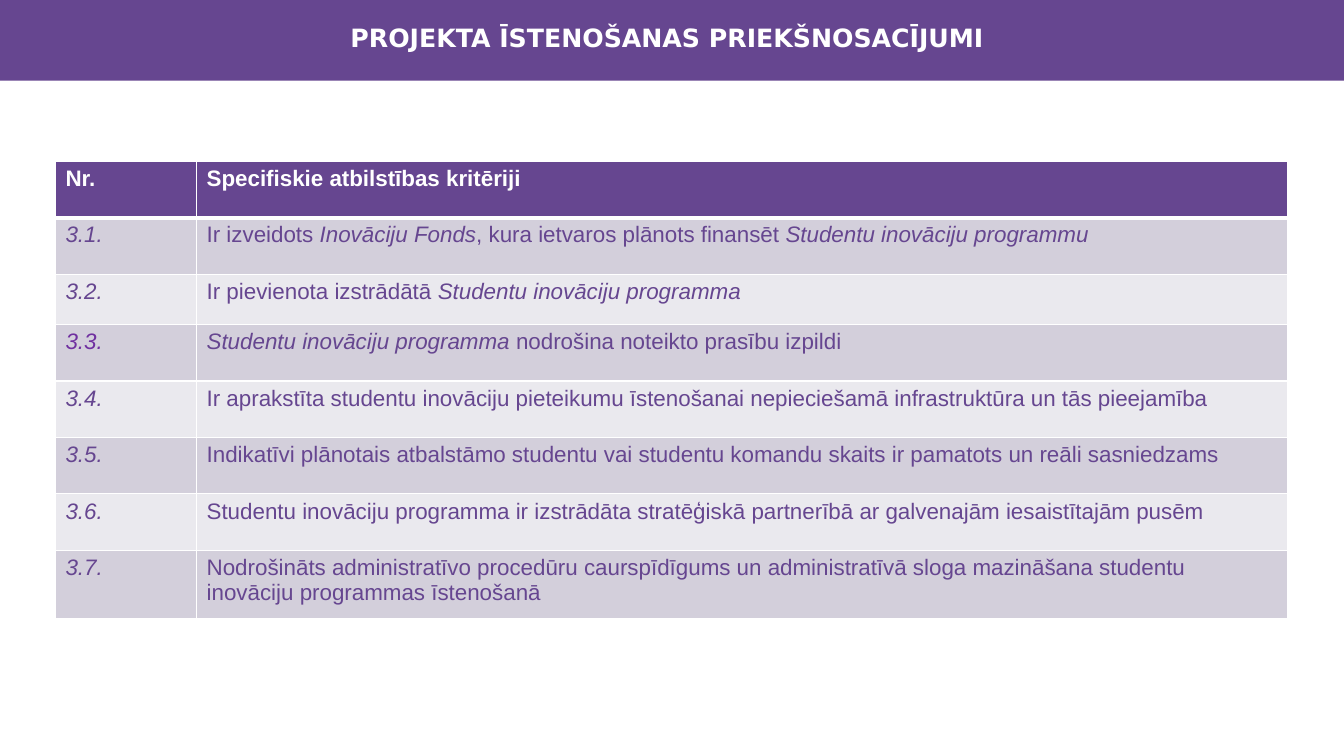
from lxml import etree
from pptx import Presentation
from pptx.dml.color import RGBColor
from pptx.enum import shapes, text
from pptx.oxml.ns import qn
from pptx.util import Inches, Pt

PURPLE, VIOLET, WHITE = "664690", "7030A0", "FFFFFF"
BANDS = ("D3CFDB", "EAE9EE")
COLUMN_WIDTHS = (1.4, 10.82)
ROW_HEIGHTS = (0.56, 0.56, 0.5, 0.56, 0.56, 0.56, 0.56, 0.68)

# Asterisks enclose italic words
CRITERIA = (
    "Ir izveidots *Inovāciju Fonds*, kura ietvaros plānots finansēt *Studentu inovāciju programmu*",
    "Ir pievienota izstrādātā *Studentu inovāciju programma*",
    "*Studentu inovāciju programma *nodrošina noteikto prasību izpildi",
    "Ir aprakstīta studentu inovāciju pieteikumu īstenošanai nepieciešamā infrastruktūra "
    "un tās pieejamība",
    "Indikatīvi plānotais atbalstāmo studentu vai studentu komandu skaits ir pamatots "
    "un reāli sasniedzams",
    "Studentu inovāciju programma ir izstrādāta stratēģiskā partnerībā ar galvenajām "
    "iesaistītajām pusēm",
    "Nodrošināts administratīvo procedūru caurspīdīgums un administratīvā sloga mazināšana "
    "studentu inovāciju programmas īstenošanā",
)


def rgb(color):
    return RGBColor.from_string(color)


def set_font(font, name, size, color, bold=False, italic=False):
    font.name, font.size = name, Pt(size)
    font.bold, font.italic = bold, italic
    font.color.rgb = rgb(color)


def add_title_bar(slide, title):
    bar = slide.shapes.add_shape(shapes.MSO_SHAPE.RECTANGLE, Inches(0), Inches(-0.02),
                                 Inches(13.33), Inches(0.82))
    bar.shadow.inherit = False
    bar.fill.solid()
    bar.fill.fore_color.rgb = rgb(PURPLE)
    bar.line.fill.background()
    frame = bar.text_frame
    frame.word_wrap = True
    frame.margin_left = Inches(0)
    frame.vertical_anchor = text.MSO_ANCHOR.MIDDLE
    paragraph = frame.paragraphs[0]
    paragraph.text = title
    paragraph.alignment = text.PP_ALIGN.CENTER
    paragraph.line_spacing = 0.9
    set_font(paragraph.font, "DejaVu Sans", 18, WHITE, bold=True)


def set_borders(cell, top=1, bottom=1):
    properties = cell._tc.get_or_add_tcPr()
    for side, width in (("L", 1), ("R", 1), ("T", top), ("B", bottom)):
        line = etree.SubElement(properties, qn(f"a:ln{side}"), w=str(Pt(width)))
        fill = etree.SubElement(line, qn("a:solidFill"))
        etree.SubElement(fill, qn("a:srgbClr"), val=WHITE)


def fill_cell(cell, content, fill, color=PURPLE, bold=False):
    cell.fill.solid()
    cell.fill.fore_color.rgb = rgb(fill)
    paragraph = cell.text_frame.paragraphs[0]
    for index, part in enumerate(content.split("*")):
        if part:
            run = paragraph.add_run()
            run.text = part
            set_font(run.font, "Arial", 16, color, bold, italic=index % 2 == 1)


def add_criteria_table(slide):
    table = slide.shapes.add_table(len(ROW_HEIGHTS), len(COLUMN_WIDTHS), Inches(0.55), Inches(1.6),
                                   Inches(sum(COLUMN_WIDTHS)), Inches(sum(ROW_HEIGHTS))).table
    for column, width in zip(table.columns, COLUMN_WIDTHS):
        column.width = Inches(width)
    for index, (row, height) in enumerate(zip(table.rows, ROW_HEIGHTS)):
        row.height = Inches(height)
        for cell in row.cells:
            set_borders(cell, top=3 if index == 1 else 1, bottom=3 if index == 0 else 1)

    # Header row
    for column, heading in enumerate(("Nr.", "Specifiskie atbilstības kritēriji")):
        fill_cell(table.cell(0, column), heading, PURPLE, WHITE, bold=True)

    # Numbered criteria in alternating bands
    for number, criterion in enumerate(CRITERIA, start=1):
        band = BANDS[(number - 1) % 2]
        number_color = VIOLET if number == 3 else PURPLE
        fill_cell(table.cell(number, 0), f"*3.{number}.*", band, number_color)
        fill_cell(table.cell(number, 1), criterion, band)


def main():
    presentation = Presentation()
    presentation.slide_width, presentation.slide_height = Inches(13.33), Inches(7.5)
    slide = presentation.slides.add_slide(presentation.slide_layouts[6])
    add_title_bar(slide, "PROJEKTA ĪSTENOŠANAS PRIEKŠNOSACĪJUMI")
    add_criteria_table(slide)
    presentation.save("out.pptx")


if __name__ == "__main__":
    main()
